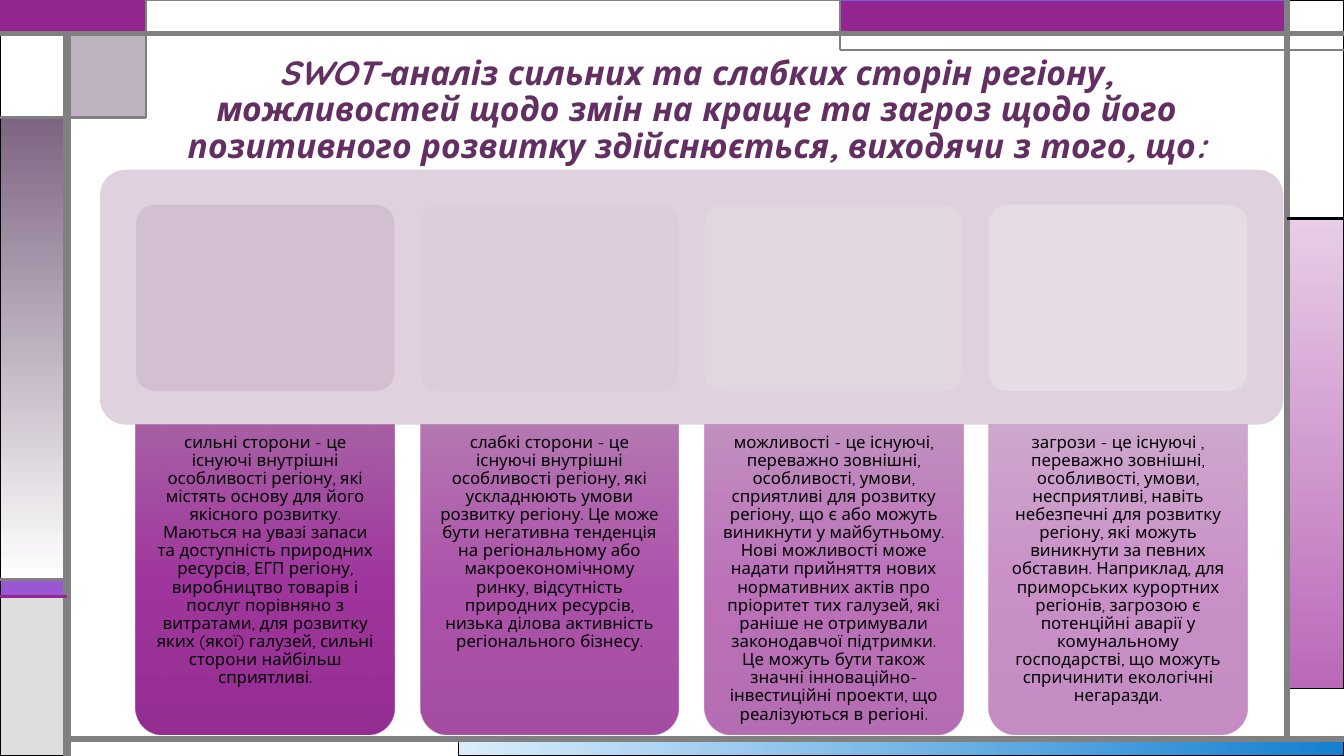
from typing import NamedTuple

from lxml.etree import SubElement
from pptx import Presentation
from pptx.dml.color import RGBColor
from pptx.enum.shapes import MSO_CONNECTOR, MSO_SHAPE
from pptx.enum.text import MSO_ANCHOR, PP_ALIGN
from pptx.oxml.ns import qn
from pptx.util import Pt

COLORS = {
    "white": "FFFFFF", "black": "000000", "gray": "808080", "silver": "DDDDDD",
    "plum": "92278F", "violet": "9B57D3", "indigo": "755DD9", "mauve": "7E6583",
    "sky": "DAEDFB", "blue": "1480D1", "pink": "E8CDE7", "orchid": "BA69B8",
    "title": "632E62", "panel": "DCCDDB",
    "card1": "D2BED1", "card2": "DBCCDA", "card3": "E5DAE4", "card4": "EEE8EE",
    "top": "9F519D", "mid": "972294", "low": "8B1988",
}
FONT = "Quicksand"
WIDE, HIGH = 960, 540
LEFT, RIGHT, BAR, FLOOR = 48, 919.5, 24, 528


class Box(NamedTuple):
    x: float
    y: float
    w: float
    h: float


class Block(NamedTuple):
    box: Box
    fill: tuple[str, ...]
    line: str | None = "black"
    width: float = 0.75
    alpha: int = 100
    angle: int = 270
    kind: MSO_SHAPE = MSO_SHAPE.RECTANGLE
    adjust: tuple[float, ...] = ()


class Rule(NamedTuple):
    x1: float
    y1: float
    x2: float
    y2: float
    width: float
    color: str = "gray"


class Column(NamedTuple):
    color: str
    alpha: int
    text: str


def rgb(name: str) -> RGBColor:
    return RGBColor.from_string(COLORS[name])


def fade(node, alpha: int) -> None:
    if alpha < 100:
        for color in node.iter(qn("a:srgbClr")):
            SubElement(color, qn("a:alpha"), val=str(alpha * 1000))


def draw_block(slide, block: Block) -> None:
    shape = slide.shapes.add_shape(block.kind, *map(Pt, block.box))
    shape.shadow.inherit = False
    for i, value in enumerate(block.adjust):
        shape.adjustments[i] = value
    if len(block.fill) == 1:
        shape.fill.solid()
        shape.fill.fore_color.rgb = rgb(block.fill[0])
    else:
        shape.fill.gradient()
        shape.fill.gradient_angle = block.angle
        stops = next(shape._element.spPr.iter(qn("a:gsLst")))
        for stop in list(stops):
            stops.remove(stop)
        step = 100000 // (len(block.fill) - 1)
        for i, name in enumerate(block.fill):
            stop = SubElement(stops, qn("a:gs"), pos=str(i * step))
            SubElement(stop, qn("a:srgbClr"), val=COLORS[name])
    if block.line:
        shape.line.color.rgb = rgb(block.line)
        shape.line.width = Pt(block.width)
    else:
        shape.line.fill.background()
    fade(shape._element.spPr, block.alpha)


def draw_rule(slide, rule: Rule) -> None:
    line = slide.shapes.add_connector(
        MSO_CONNECTOR.STRAIGHT, *map(Pt, (rule.x1, rule.y1, rule.x2, rule.y2)))
    line.line.color.rgb = rgb(rule.color)
    line.line.width = Pt(rule.width)
    SubElement(line._element.spPr, qn("a:effectLst"))


def draw_text(slide, box: Box, text: str, size: float, color: str,
              inset: tuple[float, float], anchor: MSO_ANCHOR,
              strong: bool = False, after: float = 0) -> None:
    frame = slide.shapes.add_textbox(*map(Pt, box)).text_frame
    frame.word_wrap = True
    frame.vertical_anchor = anchor
    frame.margin_left = frame.margin_right = Pt(inset[0])
    frame.margin_top = frame.margin_bottom = Pt(inset[1])
    para = frame.paragraphs[0]
    para.alignment = PP_ALIGN.CENTER
    para.line_spacing = 0.9
    para.space_after = Pt(after)
    run = para.add_run()
    run.text = text
    run.font.name = FONT
    run.font.size = Pt(size)
    run.font.bold = run.font.italic = strong
    run.font.color.rgb = rgb(color)


# Frame of coloured blocks around the slide
BLOCKS = [
    Block(Box(327.6, FLOOR, 632.4, 12), ("sky", "blue"), angle=0),
    Block(Box(RIGHT, 156, 40.5, 336), ("pink", "orchid")),
    Block(Box(0, 414, LEFT, 12), ("violet",)),
    Block(Box(0, 426, LEFT, 114), ("silver",)),
    Block(Box(RIGHT, 0, 40.5, 156), ("white",)),
    Block(Box(600, 0, 319.5, BAR), ("plum",), "indigo"),
    Block(Box(LEFT, BAR, 56, 60), ("mauve",), alpha=50),
    Block(Box(0, 84, LEFT, 330), ("mauve", "white")),
    Block(Box(0, BAR, LEFT, 60), ("white",)),
    Block(Box(0, 0, 104, BAR), ("plum",), "plum", 1.5),
    Block(Box(104, 0, 496, BAR), ("white",), "gray"),
]
RULES = [
    Rule(LEFT, HIGH, LEFT, BAR, 6),
    Rule(LEFT, FLOOR, WIDE, FLOOR, 4.5),
    Rule(RIGHT, FLOOR, RIGHT, 0, 4.5),
    Rule(0, BAR, WIDE, BAR, 3),
    Rule(WIDE, 36, 600, 36, 1.5),
    Rule(600, 36, 600, 0, 1.5),
    Rule(RIGHT, 156, WIDE, 156, 2.25, "black"),
    Rule(104, 0, 104, 84, 1.5),
    Rule(104, 84, 0, 84, 2.25),
    Rule(LEFT, 414, 0, 414, 2.25),
    Rule(LEFT, 426, 0, 426, 2.25, "plum"),
]
TITLE = ("SWOT-аналіз сильних та слабких сторін регіону, можливостей щодо змін на "
         "краще та загроз щодо його позитивного розвитку здійснюється, виходячи з того, що:")
COLUMNS = [
    Column("card1", 90, "сильні сторони - це існуючі внутрішні особливості регіону, які містять "
           "основу для його якісного розвитку. Маються на увазі запаси та доступність природних "
           "ресурсів, ЕГП регіону, виробництво товарів і послуг порівняно з витратами, для "
           "розвитку яких (якої) галузей, сильні сторони найбільш сприятливі."),
    Column("card2", 77, "слабкі сторони - це існуючі внутрішні особливості регіону, які "
           "ускладнюють умови розвитку регіону. Це може бути негативна тенденція на "
           "регіональному або макроекономічному ринку, відсутність природних ресурсів, "
           "низька ділова активність регіонального бізнесу."),
    Column("card3", 63, "можливості - це існуючі, переважно зовнішні, особливості, умови, "
           "сприятливі для розвитку регіону, що є або можуть виникнути у майбутньому. Нові "
           "можливості може надати прийняття нових нормативних актів про пріоритет тих галузей, "
           "які раніше не отримували законодавчої підтримки. Це можуть бути також значні "
           "інноваційно-інвестиційні проекти, що реалізуються в регіоні."),
    Column("card4", 50, "загрози - це існуючі , переважно зовнішні, особливості, умови, "
           "несприятливі, навіть небезпечні для розвитку регіону, які можуть виникнути за певних "
           "обставин. Наприклад, для приморських курортних регіонів, загрозою є потенційні аварії "
           "у комунальному господарстві, що можуть спричинити екологічні негаразди."),
]


def main() -> None:
    deck = Presentation()
    deck.slide_width, deck.slide_height = Pt(WIDE), Pt(HIGH)
    slide = deck.slides.add_slide(deck.slide_layouts[6])

    for block in BLOCKS:
        draw_block(slide, block)
    for rule in RULES:
        draw_rule(slide, rule)

    # Title
    draw_text(slide, Box(119.5, 31.7, 756, 90), TITLE, 24, "title",
              (7.2, 3.6), MSO_ANCHOR.BOTTOM, strong=True)

    # Panel with four cards, each above its description
    round_box = MSO_SHAPE.ROUNDED_RECTANGLE
    draw_block(slide, Block(Box(71.7, 121.5, 844.8, 181.5), ("panel",), "panel", 0.5, 90,
                            kind=round_box, adjust=(0.1,)))
    for i, col in enumerate(COLUMNS):
        x = 97.2 + 203.05 * i
        draw_block(slide, Block(Box(x, 146.2, 184.6, 133.1), (col.color,), None,
                                alpha=col.alpha, kind=round_box, adjust=(0.1,)))
        draw_block(slide, Block(Box(x, 303, 184.6, 222), ("top", "mid", "low"), None,
                                alpha=col.alpha, kind=MSO_SHAPE.ROUND_2_SAME_RECTANGLE,
                                adjust=(0, 0.105)))
        draw_text(slide, Box(x + 5.7, 303, 173.3, 216), col.text, 12, "black",
                  (6.7, 6.7), MSO_ANCHOR.TOP, after=4.2)

    deck.save("out.pptx")


if __name__ == "__main__":
    main()
